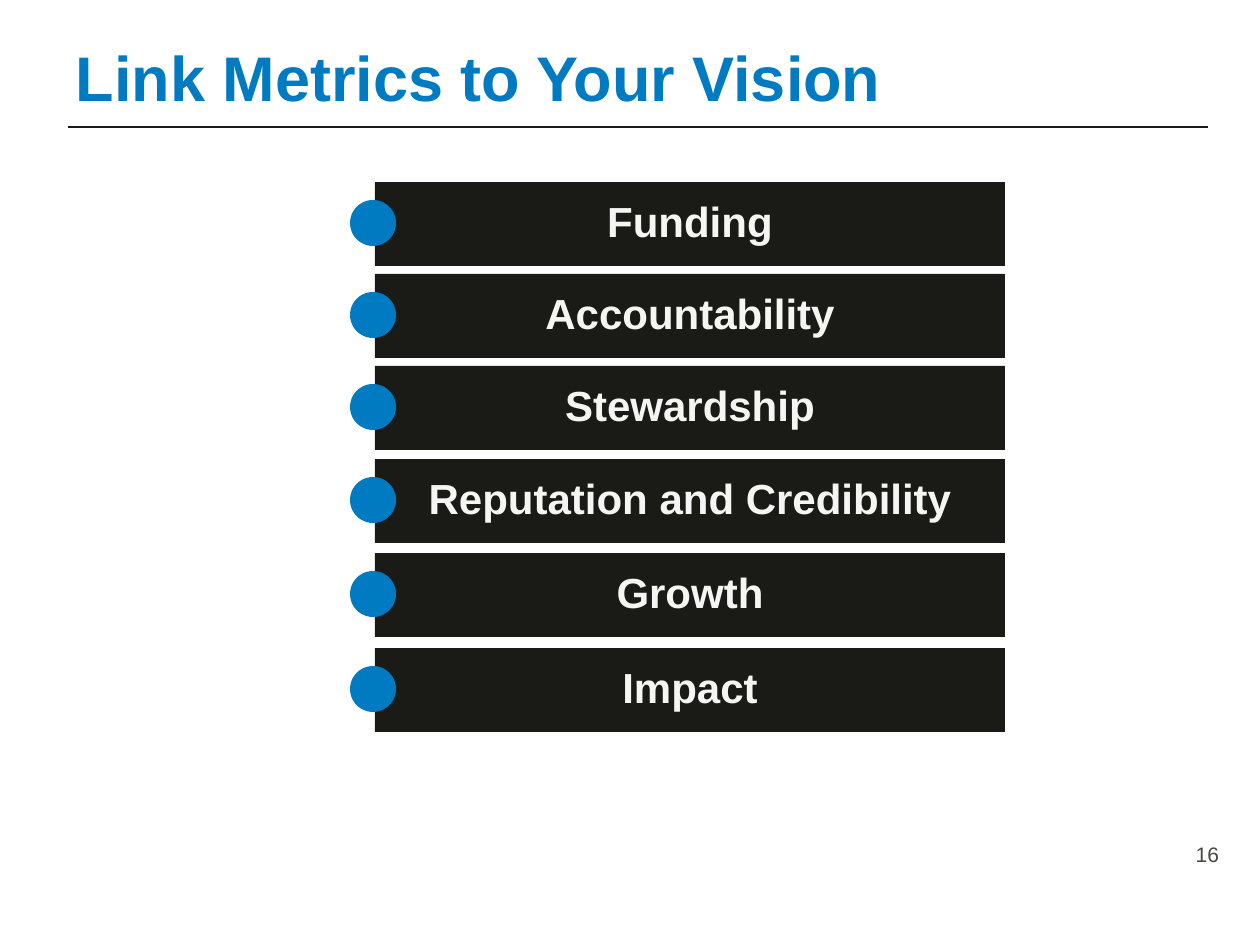
from pptx import Presentation
from pptx.dml.color import RGBColor
from pptx.enum.shapes import MSO_CONNECTOR, MSO_SHAPE
from pptx.enum.text import MSO_ANCHOR, PP_ALIGN
from pptx.oxml.ns import qn
from pptx.util import Pt
from lxml.etree import SubElement

PX = 914400 / 126
BLUE = RGBColor(0x00, 0x7A, 0xC1)
INK = RGBColor(0x1A, 0x1A, 0x16)
PALE = RGBColor(0xF5, 0xF5, 0xF3)
GREY = RGBColor(0x48, 0x48, 0x47)
WHITE = RGBColor(0xFF, 0xFF, 0xFF)
METRICS = [
    ("Funding", 182),
    ("Accountability", 274),
    ("Stewardship", 366),
    ("Reputation and Credibility", 459),
    ("Growth", 553),
    ("Impact", 648),
]


def emu(*lengths):
    """Turn px lengths into EMU."""
    return [round(n * PX) for n in lengths]


def write(tf, text, size, color, bold, align, anchor, insets):
    """Write one run of text into a frame."""
    tf.word_wrap = True
    tf.vertical_anchor = anchor
    tf.margin_left, tf.margin_top, tf.margin_right, tf.margin_bottom = emu(*insets)
    p = tf.paragraphs[0]
    p.alignment = align
    r = p.add_run()
    r.text = text
    r.font.name = "Arial"
    r.font.size = Pt(size)
    r.font.bold = bold
    r.font.color.rgb = color
    return p


def add_solid(s, kind, box, color):
    """Add a flat filled shape without an outline."""
    sp = s.shapes.add_shape(kind, *emu(*box))
    sp.shadow.inherit = False
    sp.fill.solid()
    sp.fill.fore_color.rgb = color
    sp.line.fill.background()
    return sp


def add_header(s, x, y, w, h):
    """Place the title and the rule beneath it."""
    tf = s.shapes.add_textbox(*emu(x, y, w, h)).text_frame
    write(tf, "Link Metrics to Your Vision", 36, BLUE, True,
          PP_ALIGN.LEFT, MSO_ANCHOR.MIDDLE, (13, 6, 6, 6))
    rule = s.shapes.add_connector(
        MSO_CONNECTOR.STRAIGHT, *emu(x + 5, y + h - 12, x + w - 4, y + h - 12))
    rule.line.color.rgb = INK
    rule.line.width = Pt(1.25)
    SubElement(rule._element.spPr, qn("a:effectLst"))


def add_metric(s, label, x, y, w, h):
    """Place a labelled bar with a dot on its left edge."""
    bar = add_solid(s, MSO_SHAPE.RECTANGLE, (x, y, w, h), INK)
    p = write(bar.text_frame, label, 24, PALE, True,
              PP_ALIGN.CENTER, MSO_ANCHOR.MIDDLE, (13, 6, 13, 6))
    p.line_spacing = 0.9
    add_solid(s, MSO_SHAPE.OVAL, (x - 25, y + 18, 46, 46), BLUE)


def add_page_number(s, x, y, w, h):
    """Place the page number."""
    tf = s.shapes.add_textbox(*emu(x, y, w, h)).text_frame
    write(tf, "16", 12, GREY, False, PP_ALIGN.RIGHT, MSO_ANCHOR.BOTTOM, (13, 6, 13, 0))


def main():
    """Build and save the slide."""
    prs = Presentation()
    prs.slide_width, prs.slide_height = emu(1260, 945)
    s = prs.slides.add_slide(prs.slide_layouts[6])
    s.background.fill.solid()
    s.background.fill.fore_color.rgb = WHITE
    add_header(s, 63, 13, 1149, 126)
    for label, top in METRICS:
        add_metric(s, label, 375, top, 630, 84)
    add_page_number(s, 1131, 829, 101, 38)
    prs.save("out.pptx")


if __name__ == "__main__":
    main()
